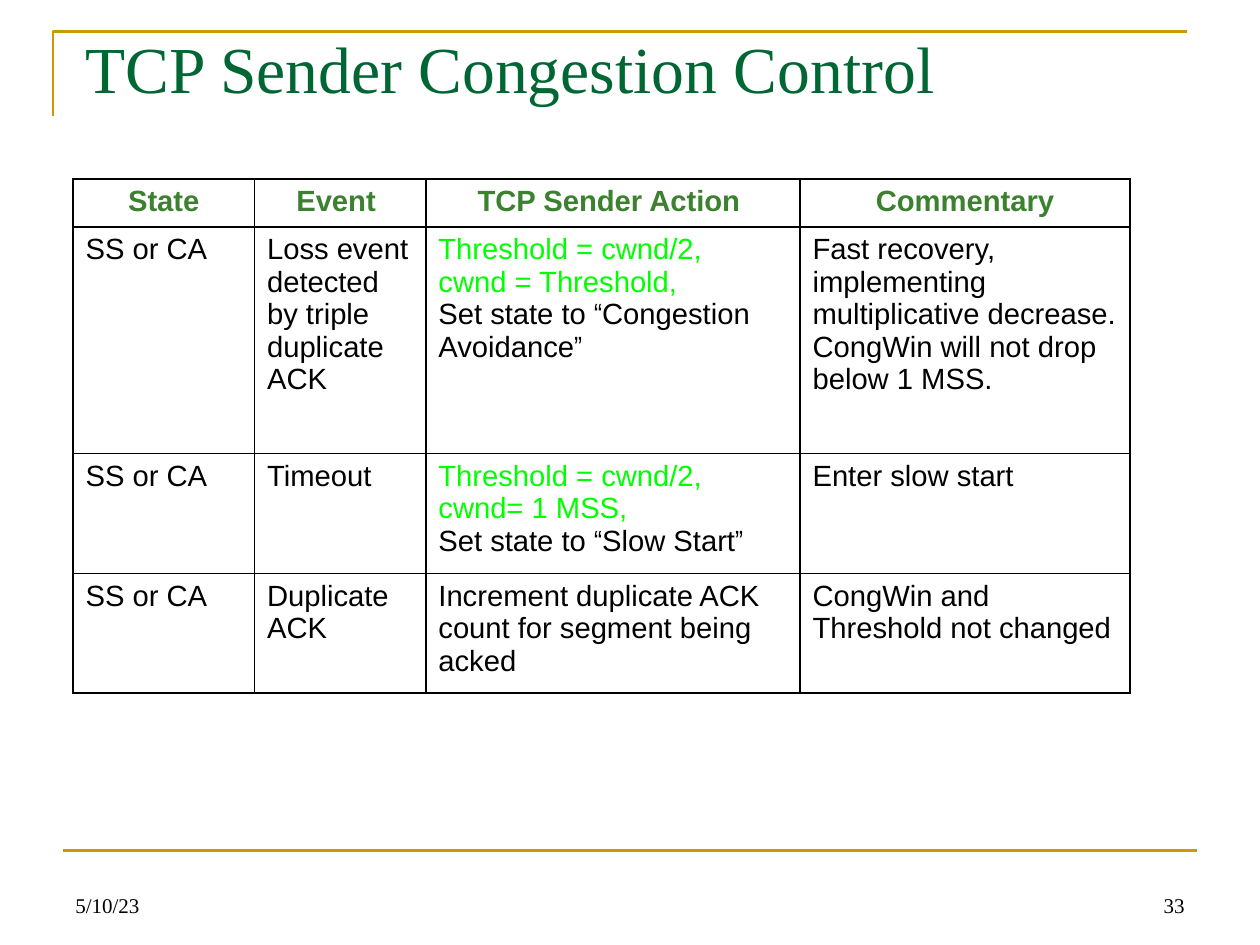
from dataclasses import dataclass
from itertools import groupby

from lxml.etree import SubElement
from pptx import Presentation
from pptx.dml.color import RGBColor
from pptx.enum.shapes import MSO_CONNECTOR
from pptx.enum.text import MSO_ANCHOR, PP_ALIGN
from pptx.oxml import parse_xml
from pptx.oxml.ns import nsdecls, qn
from pptx.util import Inches, Pt


@dataclass(frozen=True)
class Theme:
    rule: str = "CC9900"
    title: str = "006633"
    header: str = "3B812F"
    body: str = "000000"
    highlight: str = "00FF00"
    border: str = "000000"
    serif: str = "Times New Roman"
    sans: str = "Arial"
    quote: str = "Arial Narrow"
    title_size: float = 37.5
    table_size: float = 16.7
    footer_size: float = 12
    rule_width: float = 1.5
    border_width: float = 1


THEME = Theme()
TITLE = "TCP Sender Congestion Control"
HEADERS = ["State", "Event ", "TCP Sender Action ", "Commentary"]
ROWS = [
    [
        "SS or CA",
        "Loss event detected by triple duplicate ACK",
        "Threshold = cwnd/2,\ncwnd = Threshold,\nSet state to “Congestion Avoidance”",
        "Fast recovery, implementing multiplicative decrease. "
        "CongWin will not drop below 1 MSS.",
    ],
    [
        "SS or CA",
        "Timeout",
        "Threshold = cwnd/2,\ncwnd= 1 MSS,\nSet state to “Slow Start”",
        "Enter slow start",
    ],
    [
        "SS or CA",
        "Duplicate ACK",
        "Increment duplicate ACK count for segment being acked",
        "CongWin and Threshold not changed",
    ],
]
COLUMN_WIDTHS = [1.44, 1.36, 2.97, 2.62]
ROW_HEIGHTS = [0.38, 1.8, 0.95, 0.95]


def format_run(run, font, size, color, bold=False):
    run.font.name = font
    run.font.size = Pt(size)
    run.font.color.rgb = RGBColor.from_string(color)
    run.font.bold = bold


def format_rule(shape):
    shape.line.color.rgb = RGBColor.from_string(THEME.rule)
    shape.line.width = Pt(THEME.rule_width)


def add_corner_rule(slide, left, top, width, height):
    builder = slide.shapes.build_freeform(Inches(left), Inches(top + height))
    corner = [(Inches(left), Inches(top)), (Inches(left + width), Inches(top))]
    builder.add_line_segments(corner, close=False)
    shape = builder.convert_to_shape()
    shape.fill.background()
    shape.shadow.inherit = False
    format_rule(shape)


def add_footer_rule(slide, left, top, width):
    connector = slide.shapes.add_connector(
        MSO_CONNECTOR.STRAIGHT,
        Inches(left), Inches(top), Inches(left + width), Inches(top),
    )
    format_rule(connector)
    SubElement(connector.element.spPr, qn("a:effectLst"))


def place_title(slide, left, top, width, height):
    title = slide.shapes.title
    title.left, title.top = Inches(left), Inches(top)
    title.width, title.height = Inches(width), Inches(height)
    title.text_frame.text = TITLE
    title.text_frame.vertical_anchor = MSO_ANCHOR.MIDDLE
    paragraph = title.text_frame.paragraphs[0]
    paragraph.alignment = PP_ALIGN.LEFT
    format_run(paragraph.runs[0], THEME.serif, THEME.title_size, THEME.title)


def add_cell_borders(cell):
    properties = cell._tc.get_or_add_tcPr()
    for index, side in enumerate(("lnL", "lnR", "lnT", "lnB")):
        properties.insert(index, parse_xml(
            f'<a:{side} {nsdecls("a")} w="{Pt(THEME.border_width)}">'
            f'<a:solidFill><a:srgbClr val="{THEME.border}"/></a:solidFill></a:{side}>'
        ))


def fill_header_cell(cell, text):
    cell.text_frame.text = text
    paragraph = cell.text_frame.paragraphs[0]
    paragraph.alignment = PP_ALIGN.CENTER
    format_run(paragraph.runs[0], THEME.sans, THEME.table_size, THEME.header, bold=True)


def fill_body_cell(cell, text):
    """Highlight the window assignments and set curly quotes in their own font."""
    cell.text_frame.text = text
    for paragraph in cell.text_frame.paragraphs:
        line = paragraph.text
        color = THEME.highlight if "=" in line else THEME.body
        paragraph.clear()
        for is_quote, characters in groupby(line, lambda character: character in "“”"):
            run = paragraph.add_run()
            run.text = "".join(characters)
            font = THEME.quote if is_quote else THEME.sans
            format_run(run, font, THEME.table_size, color)


def add_action_table(slide, left, top, width, height):
    table = slide.shapes.add_table(
        len(ROW_HEIGHTS), len(COLUMN_WIDTHS),
        Inches(left), Inches(top), Inches(width), Inches(height),
    ).table
    table.first_row = table.horz_banding = False
    for column, column_width in zip(table.columns, COLUMN_WIDTHS):
        column.width = Inches(column_width)
    for row, row_height in zip(table.rows, ROW_HEIGHTS):
        row.height = Inches(row_height)
    for row_index, texts in enumerate([HEADERS, *ROWS]):
        fill_cell = fill_body_cell if row_index else fill_header_cell
        for column_index, text in enumerate(texts):
            cell = table.cell(row_index, column_index)
            cell.fill.background()
            add_cell_borders(cell)
            fill_cell(cell, text)


def add_footer_text(slide, text, alignment, left, top, width, height):
    text_box = slide.shapes.add_textbox(
        Inches(left), Inches(top), Inches(width), Inches(height)
    )
    text_frame = text_box.text_frame
    text_frame.word_wrap = True
    text_frame.vertical_anchor = MSO_ANCHOR.BOTTOM
    text_frame.text = text
    paragraph = text_frame.paragraphs[0]
    paragraph.alignment = alignment
    format_run(paragraph.runs[0], THEME.serif, THEME.footer_size, THEME.body)


def build_slide(presentation):
    slide = presentation.slides.add_slide(presentation.slide_layouts[5])
    add_corner_rule(slide, 0.42, 0.25, 9, 0.67)
    add_footer_rule(slide, 0.5, 6.75, 9)
    place_title(slide, 0.58, 0, 8.85, 1.07)
    add_action_table(slide, 0.58, 1.42, sum(COLUMN_WIDTHS), sum(ROW_HEIGHTS))
    add_footer_text(slide, "5/10/23", PP_ALIGN.LEFT, 0.5, 6.83, 2.33, 0.5)
    add_footer_text(slide, "33", PP_ALIGN.RIGHT, 7.17, 6.83, 2.33, 0.5)


def main():
    presentation = Presentation()
    presentation.slide_width = Inches(10)
    presentation.slide_height = Inches(7.5)
    build_slide(presentation)
    presentation.save("out.pptx")


if __name__ == "__main__":
    main()
